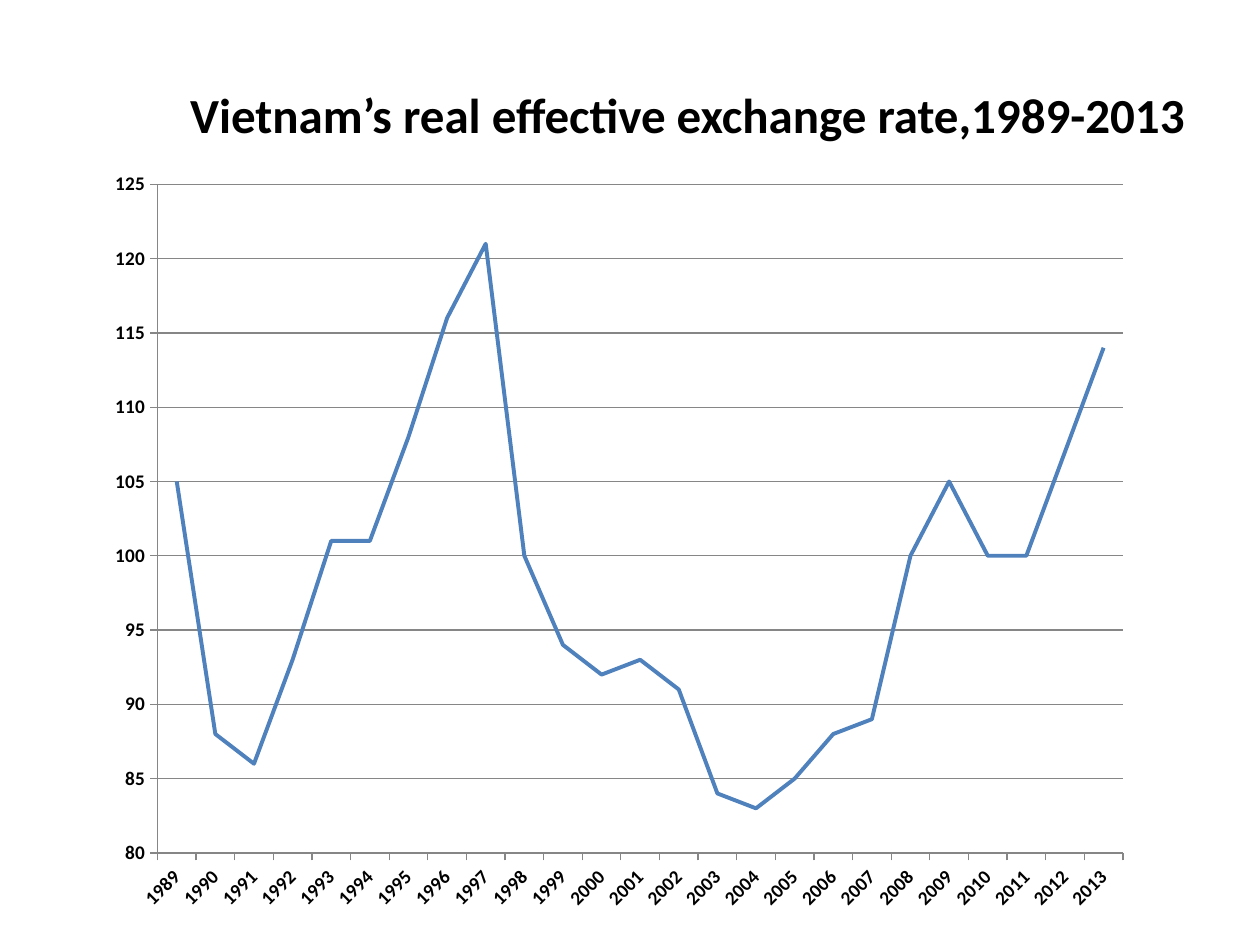
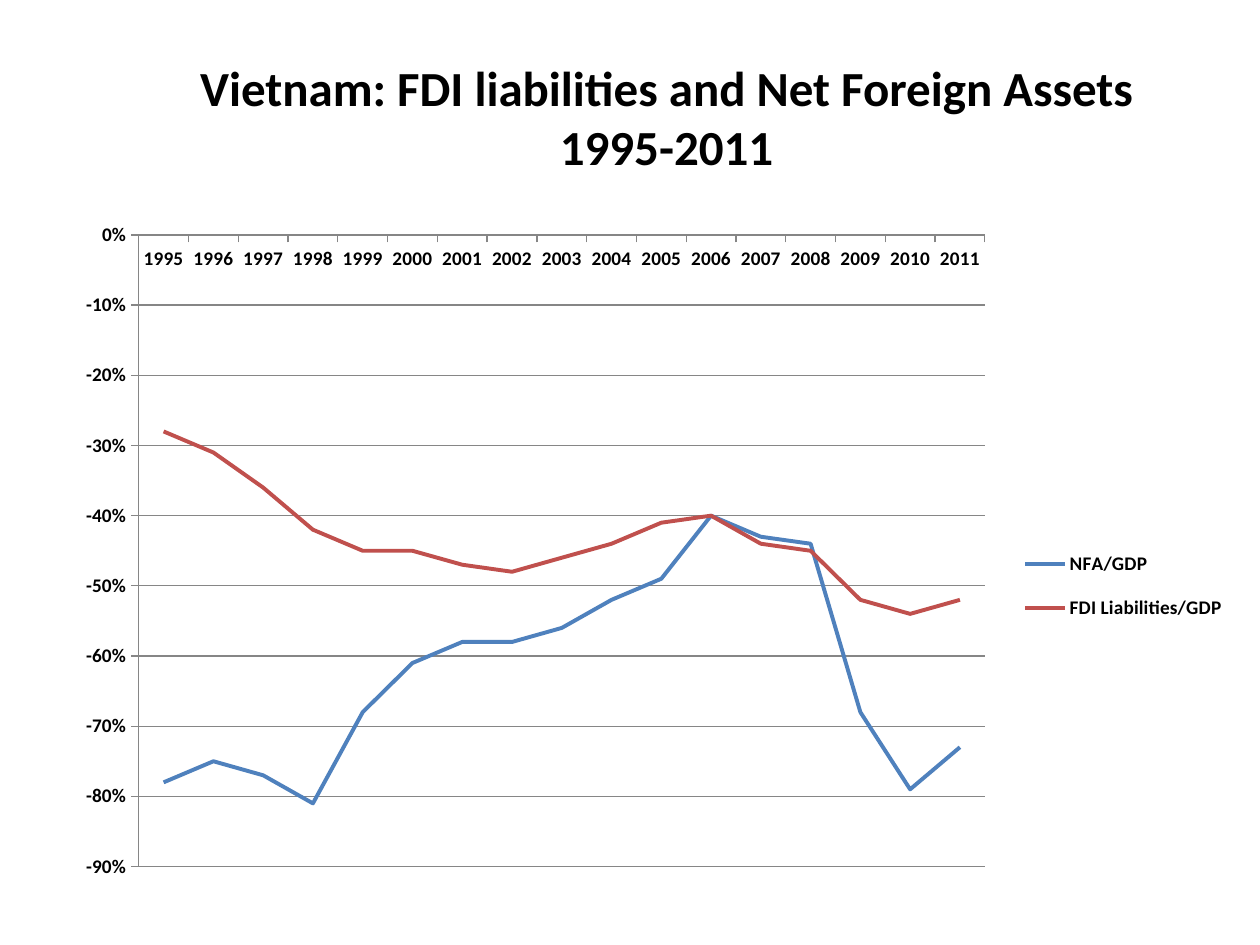
from lxml import etree
from pptx import Presentation
from pptx.chart.data import CategoryChartData
from pptx.dml.color import RGBColor
from pptx.enum.chart import XL_CHART_TYPE, XL_LEGEND_POSITION, XL_TICK_MARK
from pptx.enum.text import MSO_ANCHOR, PP_ALIGN
from pptx.oxml.ns import qn
from pptx.util import Inches, Pt

LINE = XL_CHART_TYPE.LINE
RIGHT = XL_LEGEND_POSITION.RIGHT
OUTSIDE, NO_TICK = XL_TICK_MARK.OUTSIDE, XL_TICK_MARK.NONE
MIDDLE, CENTER = MSO_ANCHOR.MIDDLE, PP_ALIGN.CENTER
TITLE_ONLY = 5

COLORS = {"text": "000000", "blue": "4F81BD", "red": "C0504D", "grid": "868686"}
SERIES_COLORS = ("blue", "red")
TITLE_FONT = {"name": "Calibri", "size": Pt(28), "bold": True}
CHART_FONT = {"name": "Calibri", "size": Pt(10), "bold": False}
LABEL_FONT = {"name": "Calibri", "size": Pt(11), "bold": True}

EXCHANGE_RATE = {
    "Series 1": (105, 88, 86, 93, 101, 101, 108, 116, 121, 100, 94, 92, 93,
                 91, 84, 83, 85, 88, 89, 100, 105, 100, 100, 107, 114),
}
FOREIGN_POSITION = {
    "NFA/GDP": (-0.78, -0.75, -0.77, -0.81, -0.68, -0.61, -0.58, -0.58, -0.56,
                -0.52, -0.49, -0.4, -0.43, -0.44, -0.68, -0.79, -0.73),
    "FDI Liabilities/GDP": (-0.28, -0.31, -0.36, -0.42, -0.45, -0.45, -0.47,
                            -0.48, -0.46, -0.44, -0.41, -0.4, -0.44, -0.45,
                            -0.52, -0.54, -0.52),
}


def set_values(target, values):
    for name, value in values.items():
        setattr(target, name, value)


def set_place(shape, place):
    lengths = (Inches(number) for number in place)
    set_values(shape, dict(zip(("left", "top", "width", "height"), lengths)))


def color(name):
    return RGBColor.from_string(COLORS[name])


def style_font(font, values):
    set_values(font, values)
    font.color.rgb = color("text")


def style_line(line, color_name, width):
    line.color.rgb = color(color_name)
    line.width = Pt(width)


def add_titled_slide(deck, title, place):
    slide = deck.slides.add_slide(deck.slide_layouts[TITLE_ONLY])
    box = slide.shapes.title
    set_place(box, place)
    frame = box.text_frame
    frame.text = title
    frame.vertical_anchor = MIDDLE
    para = frame.paragraphs[0]
    para.alignment = CENTER
    for span in para.runs:
        style_font(span.font, TITLE_FONT)
    return slide


def set_layout(element, index, place, inner=False):
    """Fix a chart part at x, y, w, h, given as shares of the chart."""
    for old in element.findall(qn("c:layout")):
        element.remove(old)
    layout = etree.Element(qn("c:layout"))
    manual = etree.SubElement(layout, qn("c:manualLayout"))
    settings = [("layoutTarget", "inner")] if inner else []
    settings += [("xMode", "edge"), ("yMode", "edge"), *zip("xywh", place)]
    for name, value in settings:
        etree.SubElement(manual, qn(f"c:{name}")).set("val", str(value))
    element.insert(index, layout)


def style_axis(axis):
    set_values(axis, {"major_tick_mark": OUTSIDE, "minor_tick_mark": NO_TICK})
    style_font(axis.tick_labels.font, LABEL_FONT)
    style_line(axis.format.line, "grid", 0.75)


def add_line_chart(slide, place, first_year, series, number_format, scale, plot_place):
    length = len(next(iter(series.values())))
    data = CategoryChartData(number_format=number_format)
    data.categories = [str(first_year + step) for step in range(length)]
    for name, values in series.items():
        data.add_series(name, values)
    lengths = [Inches(number) for number in place]
    chart = slide.shapes.add_chart(LINE, *lengths, data).chart
    set_values(chart, {"has_title": False, "has_legend": False})
    style_font(chart.font, CHART_FONT)

    style_axis(chart.category_axis)
    value_axis = chart.value_axis
    style_axis(value_axis)
    set_values(value_axis, dict(
        zip(("minimum_scale", "maximum_scale", "major_unit"), scale)))
    set_values(value_axis.tick_labels, {
        "number_format": number_format, "number_format_is_linked": False})
    style_line(value_axis.major_gridlines.format.line, "grid", 0.75)

    plot = chart.plots[0]
    plot.vary_by_categories = False
    for item, color_name in zip(plot.series, SERIES_COLORS):
        item.smooth = False
        style_line(item.format.line, color_name, 2.25)
    plot_area = chart.element.find(".//" + qn("c:plotArea"))
    set_layout(plot_area, 0, plot_place, inner=True)
    return chart


def slant_year_labels(chart):
    body = chart.category_axis.tick_labels.font and chart.element.find(
        ".//" + qn("c:catAx") + "/" + qn("c:txPr") + "/" + qn("a:bodyPr"))
    body.set("rot", str(-45 * 60000))


def add_legend(chart, place):
    chart.has_legend = True
    set_values(chart.legend, {"position": RIGHT, "include_in_layout": False})
    style_font(chart.legend.font, LABEL_FONT)
    set_layout(chart.element.find(".//" + qn("c:legend")), 1, place)


def main():
    deck = Presentation()
    set_values(deck, {"slide_width": Inches(10), "slide_height": Inches(7.5)})

    slide = add_titled_slide(
        deck, "Vietnam’s real effective exchange rate,1989-2013",
        (1.33, 0.28, 8.25, 1.25))
    chart = add_line_chart(
        slide, (0.75, 1.25, 8.33, 6.1), 1989, EXCHANGE_RATE, "0",
        (80, 125, 5), (0.06, 0.035, 0.92, 0.87))
    slant_year_labels(chart)

    slide = add_titled_slide(
        deck, "Vietnam: FDI liabilities and Net Foreign Assets\v1995-2011",
        (1.25, 0.3, 8.08, 1.25))
    chart = add_line_chart(
        slide, (0.5, 1.67, 9.25, 5.42), 1995, FOREIGN_POSITION, "0%",
        (-0.9, 0, 0.1), (0.065, 0.036, 0.726, 0.925))
    add_legend(chart, (0.82, 0.47, 0.18, 0.16))

    deck.save("out.pptx")


if __name__ == "__main__":
    main()
